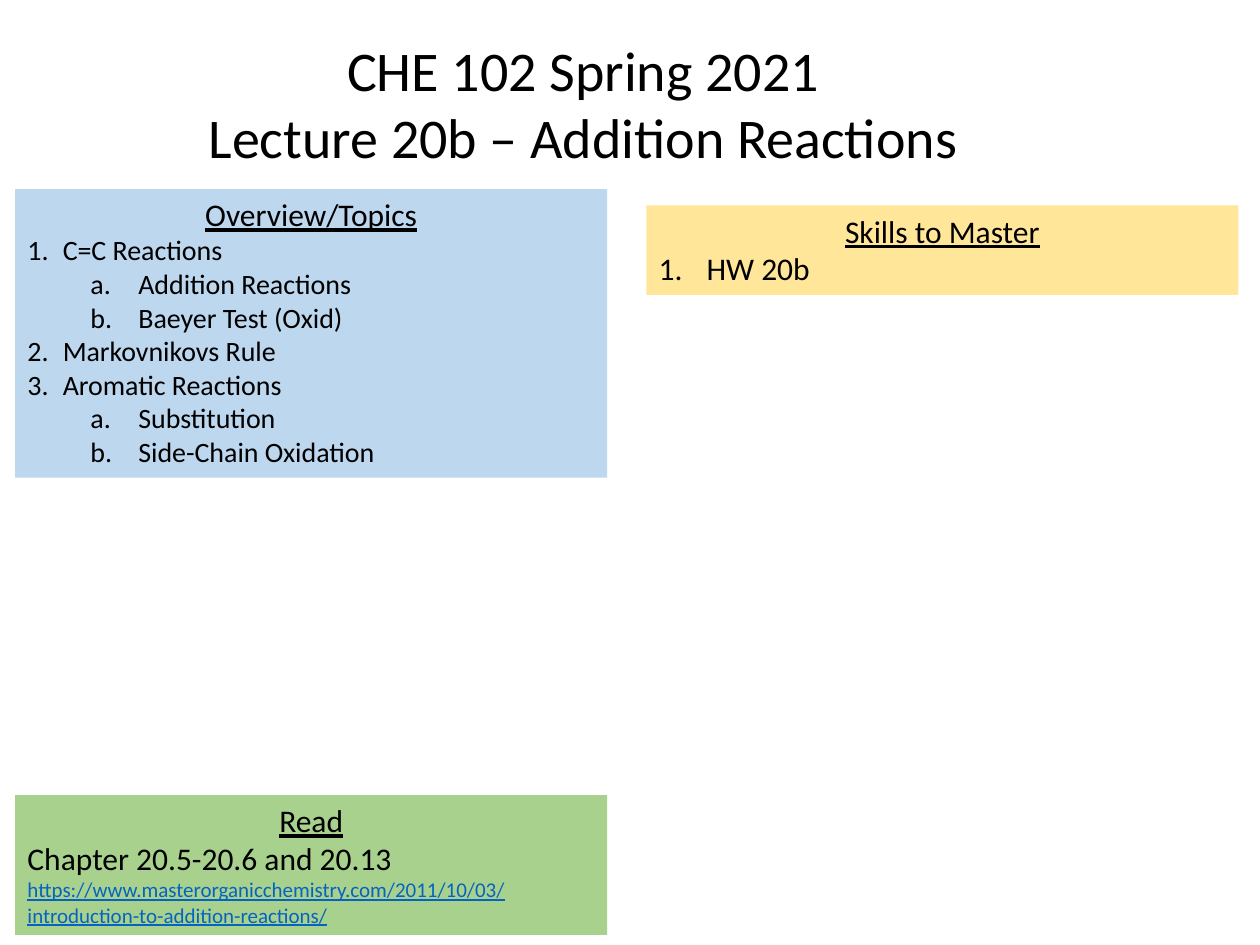
from lxml.etree import SubElement
from pptx import Presentation
from pptx.dml.color import RGBColor
from pptx.enum.text import MSO_ANCHOR as Anchor, MSO_AUTO_SIZE as AutoSize, PP_ALIGN as Align
from pptx.oxml.ns import qn
from pptx.util import Inches, Pt

BLACK = RGBColor(0x00, 0x00, 0x00)
LINK = RGBColor(0x05, 0x63, 0xC1)
BLUE = RGBColor(0xBD, 0xD7, 0xEE)
YELLOW = RGBColor(0xFF, 0xE6, 0x99)
GREEN = RGBColor(0xA9, 0xD1, 0x8E)

TITLE = ["CHE 102 Spring 2021", "Lecture 20b – Addition Reactions"]
TITLE_BOX = (1.52, 0.23, 6.22, 1.18)
PANEL_WIDTH = 4.7
LEFT_COLUMN, RIGHT_COLUMN = 0.12, 5.13

STYLES = {
    "title": {"size": Pt(32), "align": Align.CENTER},
    "heading": {"size": Pt(18), "underline": True, "align": Align.CENTER},
    "topic": {"size": Pt(16), "number": "arabicPeriod", "indent": (0.28, 0.28)},
    "subtopic": {"size": Pt(16), "number": "alphaLcPeriod", "indent": (0.88, 0.38), "level": 1},
    "skill": {"size": Pt(18), "number": "arabicPeriod", "indent": (0.38, 0.38)},
    "reading": {"size": Pt(18)},
    "link": {"size": Pt(12), "underline": True, "color": LINK},
}

PANELS = [
    (LEFT_COLUMN, 1.5, 2.29, BLUE, [
        ("heading", "Overview/Topics"),
        ("topic", "C=C Reactions"),
        ("subtopic", "Addition Reactions"),
        ("subtopic", "Baeyer Test (Oxid)"),
        ("topic", "Markovnikovs Rule"),
        ("topic", "Aromatic Reactions"),
        ("subtopic", "Substitution"),
        ("subtopic", "Side-Chain Oxidation"),
    ]),
    (RIGHT_COLUMN, 1.63, 0.71, YELLOW, [
        ("heading", "Skills to Master"),
        ("skill", "HW 20b"),
    ]),
    (LEFT_COLUMN, 6.31, 1.11, GREEN, [
        ("heading", "Read"),
        ("reading", "Chapter 20.5-20.6 and 20.13"),
        ("link", "https://www.masterorganicchemistry.com/2011/10/03/"
                 "introduction-to-addition-reactions/"),
    ]),
]


def write_line(paragraph, style_name, text):
    style = STYLES[style_name]
    paragraph.alignment = style.get("align", Align.LEFT)
    paragraph.level = style.get("level", 0)
    if "number" in style:
        margin, hanging = style["indent"]
        properties = paragraph._p.get_or_add_pPr()
        properties.set("marL", str(Inches(margin)))
        properties.set("indent", str(-Inches(hanging)))
        SubElement(properties, qn("a:buFont"), typeface="+mj-lt")
        SubElement(properties, qn("a:buAutoNum"), type=style["number"])
    run = paragraph.add_run()
    run.text = text
    font_format = {"name": "Calibri", "size": style["size"],
                   "underline": style.get("underline", False)}
    for attribute, value in font_format.items():
        setattr(run.font, attribute, value)
    run.font.color.rgb = style.get("color", BLACK)


def write_lines(frame, lines, wrap):
    frame_format = {"word_wrap": wrap, "auto_size": AutoSize.SHAPE_TO_FIT_TEXT,
                    "vertical_anchor": Anchor.TOP}
    for attribute, value in frame_format.items():
        setattr(frame, attribute, value)
    for index, (style_name, text) in enumerate(lines):
        paragraph = frame.add_paragraph() if index else frame.paragraphs[0]
        write_line(paragraph, style_name, text)


def main():
    deck = Presentation()
    deck.slide_width, deck.slide_height = Inches(10), Inches(7.5)
    slide = deck.slides.add_slide(deck.slide_layouts[5])

    title = slide.shapes.title
    for side, length in zip(("left", "top", "width", "height"), TITLE_BOX):
        setattr(title, side, Inches(length))
    write_lines(title.text_frame, [("title", line) for line in TITLE], wrap=False)

    for left, top, height, fill, lines in PANELS:
        panel = slide.shapes.add_textbox(
            Inches(left), Inches(top), Inches(PANEL_WIDTH), Inches(height))
        panel.fill.solid()
        panel.fill.fore_color.rgb = fill
        write_lines(panel.text_frame, lines, wrap=True)

    deck.save("out.pptx")


if __name__ == "__main__":
    main()
